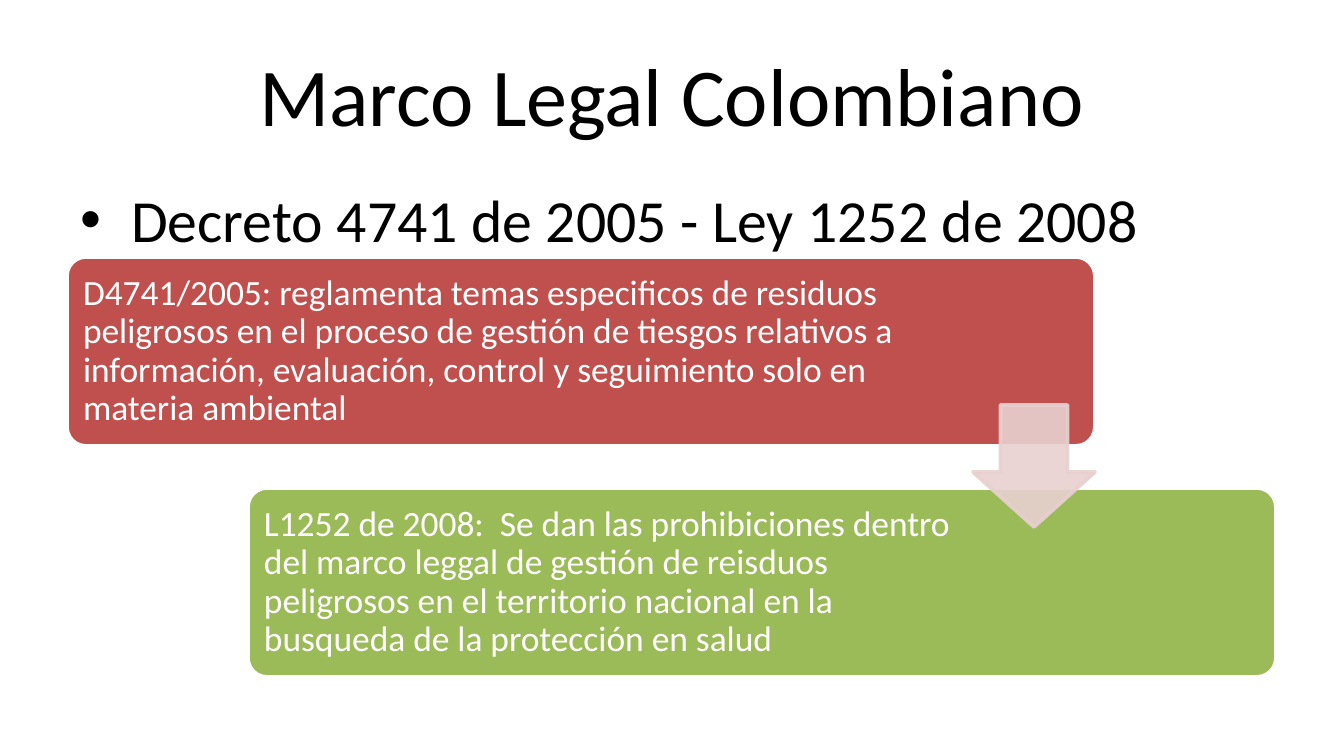
from lxml import etree
from pptx import Presentation, util as u
from pptx.dml.color import RGBColor
from pptx.enum import shapes, text
from pptx.oxml.ns import qn

PX = 914400 / 134.4  # EMU in one px


def px(length):
    return u.Emu(round(length * PX))


def color(hex_value):
    return RGBColor.from_string(hex_value)


def assign(target, values):
    for name, value in values.items():
        setattr(target, name, value)


class Deck:
    FONT = "Calibri"

    def __init__(self, width, height):
        self.prs = Presentation()
        assign(self.prs, {"slide_width": px(width), "slide_height": px(height)})
        self.slide = self.prs.slides.add_slide(self.prs.slide_layouts[5])

    def set_words(self, item, words, paragraph_format=None, **frame_format):
        frame = item.text_frame
        frame.text = words
        assign(frame, {"word_wrap": True, "auto_size": text.MSO_AUTO_SIZE.NONE, **frame_format})
        line = frame.paragraphs[0]
        assign(line, {"space_before": u.Pt(0), **(paragraph_format or {})})
        return line

    def set_font(self, line, size, ink="000000"):
        assign(line.font, {"name": self.FONT, "size": u.Pt(size)})
        line.font.color.rgb = color(ink)

    def title(self, words, box, size):
        heading = self.slide.shapes.title
        assign(heading, dict(zip(("left", "top", "width", "height"), map(px, box))))
        line = self.set_words(heading, words, {"alignment": text.PP_ALIGN.CENTER},
                              vertical_anchor=text.MSO_ANCHOR.MIDDLE)
        self.set_font(line, size)

    def bullet(self, words, box, size, indent):
        topic = self.slide.shapes.add_textbox(*map(px, box))
        line = self.set_words(topic, words)
        props = line._p.get_or_add_pPr()
        props.set("marL", str(px(indent)))
        props.set("indent", str(px(-indent)))
        etree.SubElement(props, qn("a:buFont")).set("typeface", "Arial")
        etree.SubElement(props, qn("a:buChar")).set("char", "•")
        self.set_font(line, size)

    def text(self, words, box, size, ink, inset):
        margins = {f"margin_{side}": px(inset) for side in ("left", "top", "right", "bottom")}
        passage = self.slide.shapes.add_textbox(*map(px, box))
        line = self.set_words(passage, words, {"line_spacing": 0.9},
                              vertical_anchor=text.MSO_ANCHOR.MIDDLE, **margins)
        self.set_font(line, size, ink)

    def shape(self, kind, box, fill, edge, adjustments, opacity=100):
        figure = self.slide.shapes.add_shape(kind, *map(px, box))
        figure.shadow.inherit = False
        for index, value in enumerate(adjustments):
            figure.adjustments[index] = value
        figure.fill.solid()
        figure.fill.fore_color.rgb = color(fill)
        figure.line.color.rgb = color(edge)
        figure.line.width = u.Pt(2)
        if opacity < 100:
            for tint in figure._element.spPr.iter(qn("a:srgbClr")):
                etree.SubElement(tint, qn("a:alpha")).set("val", str(opacity * 1000))


def main():
    deck = Deck(1344, 756)

    # Heading and topic
    deck.title("Marco Legal Colombiano", (67, 31, 1210, 126), 44)
    deck.bullet("Decreto 4741 de 2005 - Ley 1252 de 2008", (67, 176, 1210, 499), 32, 51)

    # The two norms, stepping down to the right
    norms = [
        ("D4741/2005: reglamenta temas especificos de residuos peligrosos en el proceso "
         "de gestión de tiesgos relativos a información, evaluación, control y "
         "seguimiento solo en materia ambiental", "C0504D", 833),
        ("L1252 de 2008:  Se dan las prohibiciones dentro del marco leggal de gestión "
         "de reisduos peligrosos en el territorio nacional en la busqueda de la "
         "protección en salud", "9BBB59", 712),
    ]
    card_width, card_height, pad = 1028, 189, 5
    for step, (words, fill, text_width) in enumerate(norms):
        left, top = 67 + 181 * step, 257 + 231 * step
        deck.shape(shapes.MSO_SHAPE.ROUNDED_RECTANGLE,
                   (left, top, card_width, card_height), fill, "FFFFFF", [0.1])
        deck.text(words, (left + pad, top + pad, text_width, card_height - 2 * pad),
                  19, "FFFFFF", 11)

    # Arrow from the decree to the law
    deck.shape(shapes.MSO_SHAPE.DOWN_ARROW, (973, 405, 122, 122),
               "E8D0D0", "E8D0D0", [0.55, 0.45], opacity=90)

    deck.prs.save("out.pptx")


if __name__ == "__main__":
    main()
